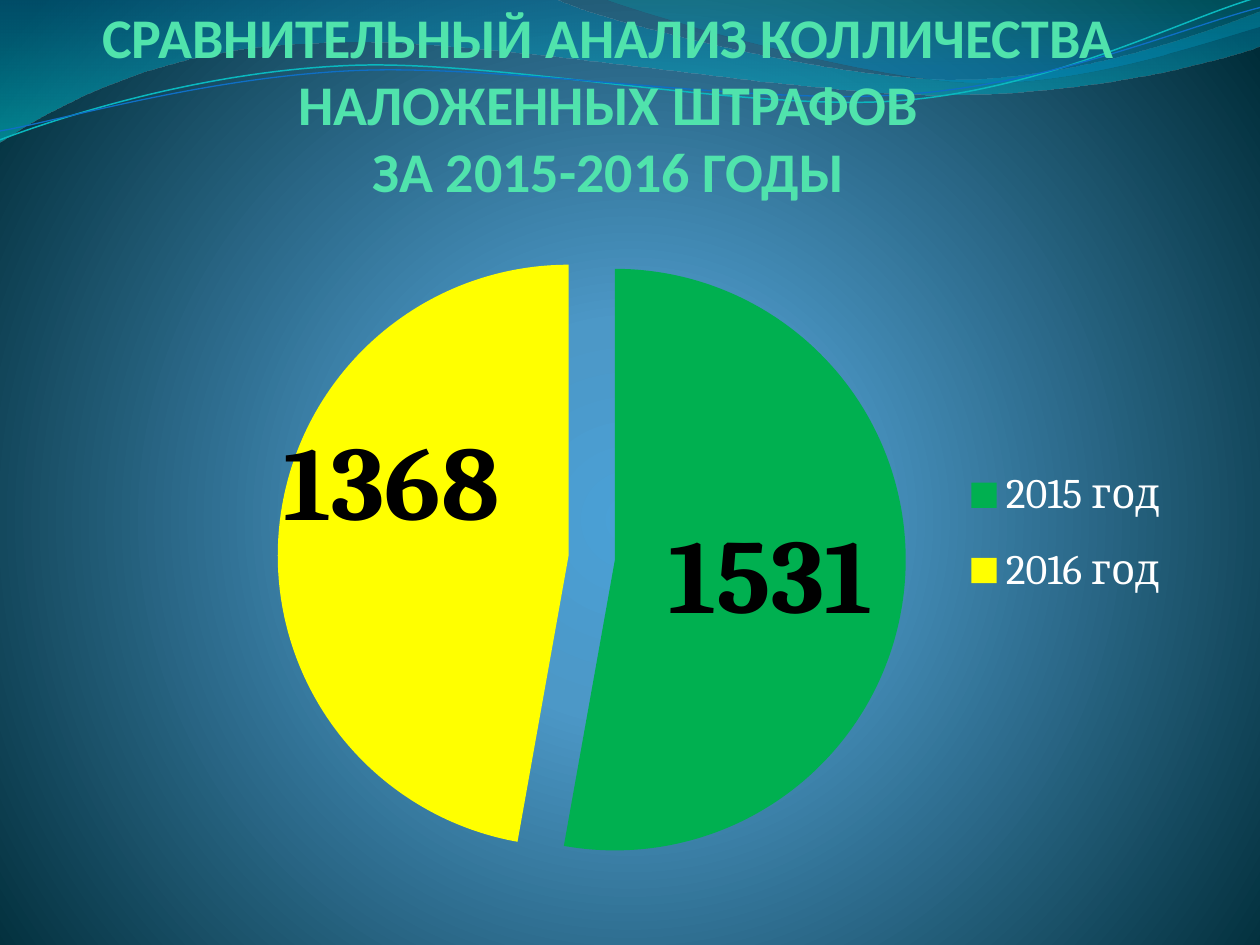
import math
from dataclasses import dataclass
from typing import Optional

from lxml import etree
from pptx import Presentation
from pptx import util as u
from pptx.chart import data as chart_data
from pptx.dml import color
from pptx.enum import chart as chart_enum
from pptx.enum import text
from pptx.oxml import ns, parse_xml


@dataclass
class Stop:
    position: int
    colour: str
    opacity: int = 100


@dataclass
class Wave:
    """Outline in inches as it shows: two numbers for a line, six for a curve."""
    start: tuple
    segments: list
    stops: Optional[list] = None
    line_colour: str = ""
    line_width: float = 0
    rotation: float = 0
    centre: tuple = (0, 0)


@dataclass
class Slice:
    category: str
    value: int
    colour: str
    label_shift: tuple


BACKGROUND = [Stop(0, "4AA0D6"), Stop(25, "4C98C7"), Stop(100, "002C38")]
WAVES = [
    Wave((0, 0), [
        (4.4, -0.01), (4.76, 0.17, 6.64, 0.63, 7.58, 0.63),
        (8.53, 0.63, 9.58, 0.26, 10, 0.09), (10.01, 0.36),
        (9.83, 0.44, 8.7, 0.76, 7.46, 0.75),
        (6.22, 0.75, 3.82, 0.28, 2.57, 0.34),
        (1.29, 0.36, 0.46, 0.83, -0.01, 1.13)],
        stops=[Stop(0, "0074A1", 45), Stop(100, "00C6CF", 55)]),
    Wave((4.79, -0.01), [
        (5.09, 0.11, 6.82, 0.62, 7.69, 0.65),
        (8.56, 0.69, 9.61, 0.32, 10, 0.21), (10, 0)],
        stops=[Stop(0, "00A1A9", 30), Stop(80, "008BBF", 45)]),
    Wave((0, 1.11), [
        (0.48, 0.93, 1.58, 0.57, 2.77, 0.52),
        (3.95, 0.47, 5.93, 0.89, 7.13, 0.8),
        (8.33, 0.71, 9.38, 0.15, 9.98, -0.02)],
        line_colour="0AB8BF", line_width=0.85, rotation=357.3, centre=(4.99, 0.57)),
    Wave((0, 1.04), [
        (0.47, 0.96, 1.64, 0.61, 2.83, 0.56),
        (4.03, 0.51, 5.97, 0.84, 7.17, 0.75),
        (8.36, 0.67, 9.41, 0.21, 10, 0.06)],
        line_colour="0F6FC6", line_width=0.75, rotation=357.3, centre=(5, 0.59)),
]
SLICES = [
    Slice("2015 год", 1531, "00B050", (0.01, 0.01)),
    Slice("2016 год", 1368, "FFFF00", (-0.03, -0.08)),
]


def rgb(value: str) -> color.RGBColor:
    return color.RGBColor.from_string(value)


def set_font(font, size: float, colour: str, name: str, bold: bool = False) -> None:
    font.size, font.name, font.bold = u.Pt(size), name, bold
    font.color.rgb = rgb(colour)


def set_gradient(properties, stops: list, direction: str) -> None:
    """Replace the solid fill of a properties element with a gradient."""
    stop_xml = "".join(
        f'<a:gs pos="{stop.position * 1000}"><a:srgbClr val="{stop.colour}">'
        f'<a:alpha val="{stop.opacity * 1000}"/></a:srgbClr></a:gs>'
        for stop in stops)
    gradient = parse_xml(
        f'<a:gradFill {ns.nsdecls("a")} rotWithShape="1">'
        f"<a:gsLst>{stop_xml}</a:gsLst>{direction}</a:gradFill>")
    properties.replace(properties.find(ns.qn("a:solidFill")), gradient)


def level_point(wave: Wave, x: float, y: float) -> tuple:
    """Undo the rotation of the wave for one point; return it in EMU."""
    angle = math.radians(-wave.rotation)
    dx, dy = x - wave.centre[0], y - wave.centre[1]
    return (u.Inches(wave.centre[0] + dx * math.cos(angle) - dy * math.sin(angle)),
            u.Inches(wave.centre[1] + dx * math.sin(angle) + dy * math.cos(angle)))


def bend_lines(shape, curves: list) -> None:
    """Turn the straight segments that have three curve points into Bezier curves."""
    for line, points in zip(shape.element.xpath(".//a:lnTo"), curves):
        if len(points) == 3:
            curve = etree.Element(ns.qn("a:cubicBezTo"))
            for x, y in points:
                point = etree.SubElement(curve, ns.qn("a:pt"))
                point.set("x", str(x - shape.left))
                point.set("y", str(y - shape.top))
            line.getparent().replace(line, curve)


def add_wave(slide, wave: Wave) -> None:
    curves = [[level_point(wave, *segment[i:i + 2]) for i in range(0, len(segment), 2)]
              for segment in wave.segments]
    builder = slide.shapes.build_freeform(*level_point(wave, *wave.start))
    builder.add_line_segments([points[-1] for points in curves],
                              close=wave.stops is not None)
    shape = builder.convert_to_shape()
    bend_lines(shape, curves)
    shape.rotation = wave.rotation
    shape.shadow.inherit = False
    if wave.stops:
        shape.line.fill.background()
        shape.fill.solid()
        set_gradient(shape.element.spPr, wave.stops, '<a:lin ang="5400000" scaled="1"/>')
    else:
        shape.fill.background()
        shape.line.color.rgb = rgb(wave.line_colour)
        shape.line.width = u.Pt(wave.line_width)


def set_layout(parent, index: int, **values) -> None:
    """Put a manual chart layout at the given child index."""
    for element in parent.findall(ns.qn("c:layout")):
        parent.remove(element)
    layout = etree.Element(ns.qn("c:layout"))
    manual = etree.SubElement(layout, ns.qn("c:manualLayout"))
    for name, value in values.items():
        etree.SubElement(manual, ns.qn(f"c:{name}")).set("val", str(value))
    parent.insert(index, layout)


def add_title(slide) -> None:
    title = slide.shapes.title
    title.left, title.top = u.Inches(0.58), u.Inches(0.44)
    title.width, title.height = u.Inches(8.5), u.Inches(1.18)
    frame = title.text_frame
    frame.margin_left = frame.margin_right = frame.margin_top = frame.margin_bottom = 0
    frame.vertical_anchor = text.MSO_ANCHOR.BOTTOM
    frame.auto_size = text.MSO_AUTO_SIZE.NONE
    frame.word_wrap = True
    paragraph = frame.paragraphs[0]
    paragraph.text = "СРАВНИТЕЛЬНЫЙ АНАЛИЗ КОЛЛИЧЕСТВА НАЛОЖЕННЫХ ШТРАФОВ\vЗА 2015-2016 ГОДЫ"
    paragraph.alignment = text.PP_ALIGN.CENTER
    set_font(paragraph.font, 32, "50E3AC", "Calibri", bold=True)
    title.element.getparent().append(title.element)  # in front of the waves


def add_pie(slide) -> None:
    data = chart_data.CategoryChartData()
    data.categories = [part.category for part in SLICES]
    data.add_series("Series 1", [part.value for part in SLICES])
    chart = slide.shapes.add_chart(
        chart_enum.XL_CHART_TYPE.PIE, u.Inches(0.75), u.Inches(1.78),
        u.Inches(8.58), u.Inches(5.63), data).chart
    set_font(chart.font, 18, "FFFFFF", "Cambria")
    chart.has_title = False
    chart.has_legend = True
    chart.legend.position = chart_enum.XL_LEGEND_POSITION.RIGHT
    chart.legend.include_in_layout = False
    set_font(chart.legend.font, 24, "FFFFFF", "Cambria")

    plot = chart.plots[0]
    plot.vary_by_categories = True
    plot.has_data_labels = True
    plot.data_labels.show_value = True
    plot.data_labels.show_percentage = False
    set_font(plot.data_labels.font, 60, "000000", "Cambria", bold=True)
    for index, part in enumerate(SLICES):
        point = plot.series[0].points[index]
        point.format.fill.solid()
        point.format.fill.fore_color.rgb = rgb(part.colour)
        point.format.line.fill.background()
        label = point.data_label
        set_font(label.font, 60, "000000", "Cambria", bold=True)
        label.position = chart_enum.XL_LABEL_POSITION.CENTER

    root = chart.element
    for element, part in zip(root.xpath(".//c:dLbl"), SLICES):
        set_layout(element, 1, x=part.label_shift[0], y=part.label_shift[1])
    for element in root.xpath(".//c:dPt"):
        explosion = etree.Element(ns.qn("c:explosion"))
        explosion.set("val", "8")
        element.find(ns.qn("c:spPr")).addprevious(explosion)
    set_layout(root.xpath(".//c:plotArea")[0], 0, layoutTarget="inner",
               xMode="edge", yMode="edge", x=0.13, y=0.06, w=0.66, h=0.82)
    set_layout(root.xpath(".//c:legend")[0], 1,
               xMode="edge", yMode="edge", x=0.8, y=0.31, w=0.2, h=0.25)


def main() -> None:
    presentation = Presentation()
    presentation.slide_width, presentation.slide_height = u.Inches(10), u.Inches(7.5)
    slide = presentation.slides.add_slide(presentation.slide_layouts[5])
    slide.background.fill.solid()
    set_gradient(
        slide.element.xpath(".//p:bgPr")[0], BACKGROUND,
        '<a:path path="circle"><a:fillToRect l="10000" t="110000" r="10000" b="100000"/></a:path>')
    for wave in WAVES:
        add_wave(slide, wave)
    add_title(slide)
    add_pie(slide)
    presentation.save("out.pptx")


if __name__ == "__main__":
    main()
